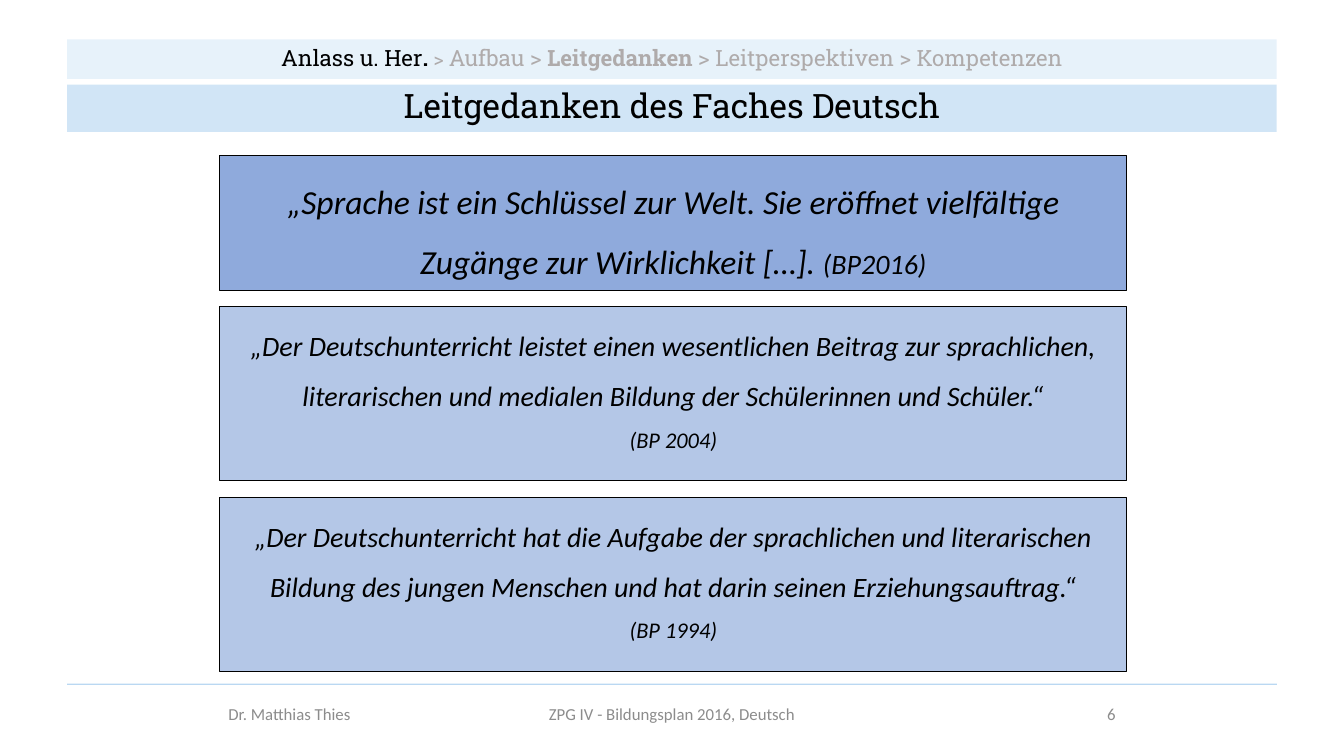
from lxml.etree import SubElement
from pptx import Presentation
from pptx.dml.color import RGBColor
from pptx.enum.shapes import MSO_CONNECTOR, MSO_SHAPE
from pptx.enum.text import MSO_ANCHOR, PP_ALIGN
from pptx.oxml.ns import qn
from pptx.util import Pt

BLUE, GREY, DIM, BLACK = "1C81D4", "AFABAB", "8C8C8C", "000000"
LEFT, WIDE = 48, 864


def paint(fill, color, alpha=100):
    """Fill with a solid hex colour at a given opacity in percent."""
    fill.solid()
    fill.fore_color.rgb = RGBColor.from_string(color)
    if alpha < 100:
        tone = fill._xPr.find(qn("a:solidFill"))[0]
        SubElement(tone, qn("a:alpha"), val=str(alpha * 1000))


def add_run(para, text, size=12, font="Calibri", color=BLACK, bold=False, italic=False):
    """Append one formatted run to a paragraph."""
    run = para.add_run()
    run.text = text
    run.font.size = Pt(size)
    run.font.name = font
    run.font.bold = bold
    run.font.italic = italic
    run.font.color.rgb = RGBColor.from_string(color)


def set_para(shape, align=PP_ALIGN.CENTER, anchor=MSO_ANCHOR.TOP, spacing=1.0, before=0):
    """Set up the text frame of a shape and return its paragraph."""
    frame = shape.text_frame
    frame.word_wrap = True
    frame.vertical_anchor = anchor
    para = frame.paragraphs[0]
    para.alignment = align
    para.line_spacing = spacing
    para.space_before = Pt(before)
    return para


def add_box(slide, box, color, alpha=100, edge=None):
    """Draw a filled rectangle with an optional outline."""
    shape = slide.shapes.add_shape(MSO_SHAPE.RECTANGLE, *map(Pt, box))
    shape.shadow.inherit = False
    paint(shape.fill, color, alpha)
    if edge:
        paint(shape.line.fill, edge)
        shape.line.width = Pt(0.75)
    else:
        shape.line.fill.background()
    return shape


def add_trail(slide, box):
    """Draw the bar that shows the sections of the talk."""
    para = set_para(add_box(slide, box, BLUE, 10), anchor=MSO_ANCHOR.MIDDLE, spacing=0.9)
    for text, size, color, bold in (
        ("Anlass u. Her", 16, BLACK, False),
        (". ", 16, BLACK, True),
        ("> ", 14, GREY, False),
        ("Aufbau > ", 16, GREY, False),
        ("Leitgedanken", 16, GREY, True),
        (" > Leitperspektiven > Kompetenzen", 16, GREY, False),
    ):
        add_run(para, text, size=size, font="Roboto Slab", color=color, bold=bold)


def add_head(slide, box, text):
    """Draw the heading bar."""
    para = set_para(add_box(slide, box, BLUE, 20), spacing=0.9, before=10)
    add_run(para, text, size=24, font="Roboto Slab")


def add_quote(slide, box, text, source, color, size=20, before=4.8, split=True):
    """Draw a framed quotation followed by its source."""
    para = set_para(add_box(slide, box, color, edge=BLACK), spacing=1.5, before=before)
    add_run(para, text, size=size, italic=True)
    if split:
        para.add_line_break()
    add_run(para, source, size=size - 4, italic=True)


def add_foot(slide, box):
    """Draw the rule and the three footer texts below it."""
    left, top, width, height = box
    rule = slide.shapes.add_connector(
        MSO_CONNECTOR.STRAIGHT, Pt(left), Pt(top), Pt(left + width), Pt(top))
    paint(rule.line.fill, BLUE, 30)
    rule.line.width = Pt(1)
    SubElement(rule._element.spPr, qn("a:effectLst"))
    for shift, span, align, text in (
        (108, 168, PP_ALIGN.LEFT, "Dr. Matthias Thies"),
        (318, 228, PP_ALIGN.CENTER, "ZPG IV - Bildungsplan 2016, Deutsch"),
        (588, 168, PP_ALIGN.RIGHT, "6"),
    ):
        area = (left + shift, top + 3, span, height - 3)
        label = slide.shapes.add_textbox(*map(Pt, area))
        add_run(set_para(label, align, MSO_ANCHOR.MIDDLE), text, color=DIM)


def main():
    """Build the slide and save it."""
    deck = Presentation()
    deck.slide_width, deck.slide_height = Pt(960), Pt(540)
    slide = deck.slides.add_slide(deck.slide_layouts[6])
    add_trail(slide, (LEFT, 28.2, WIDE, 28.2))
    add_head(slide, (LEFT, 60.4, WIDE, 33.8), "Leitgedanken des Faches Deutsch")
    add_quote(
        slide, (157, 111, 648, 96.5),
        "„Sprache ist ein Schlüssel zur Welt. Sie eröffnet vielfältige "
        "Zugänge zur Wirklichkeit […]. ",
        "(BP2016)", "8FAADC", size=24, before=10, split=False)
    quotes = (
        ("„Der Deutschunterricht leistet einen wesentlichen Beitrag zur sprachlichen, "
         "literarischen und medialen Bildung der Schülerinnen und Schüler.“", "(BP 2004)"),
        ("„Der Deutschunterricht hat die Aufgabe der sprachlichen und literarischen "
         "Bildung des jungen Menschen und hat darin seinen Erziehungsauftrag.“", "(BP 1994)"),
    )
    for row, (text, source) in enumerate(quotes):
        add_quote(slide, (157, 219 + row * 136.2, 648, 124.4), text, source, "B4C7E7")
    add_foot(slide, (LEFT, 488.8, WIDE, 39))
    deck.save("out.pptx")


if __name__ == "__main__":
    main()
